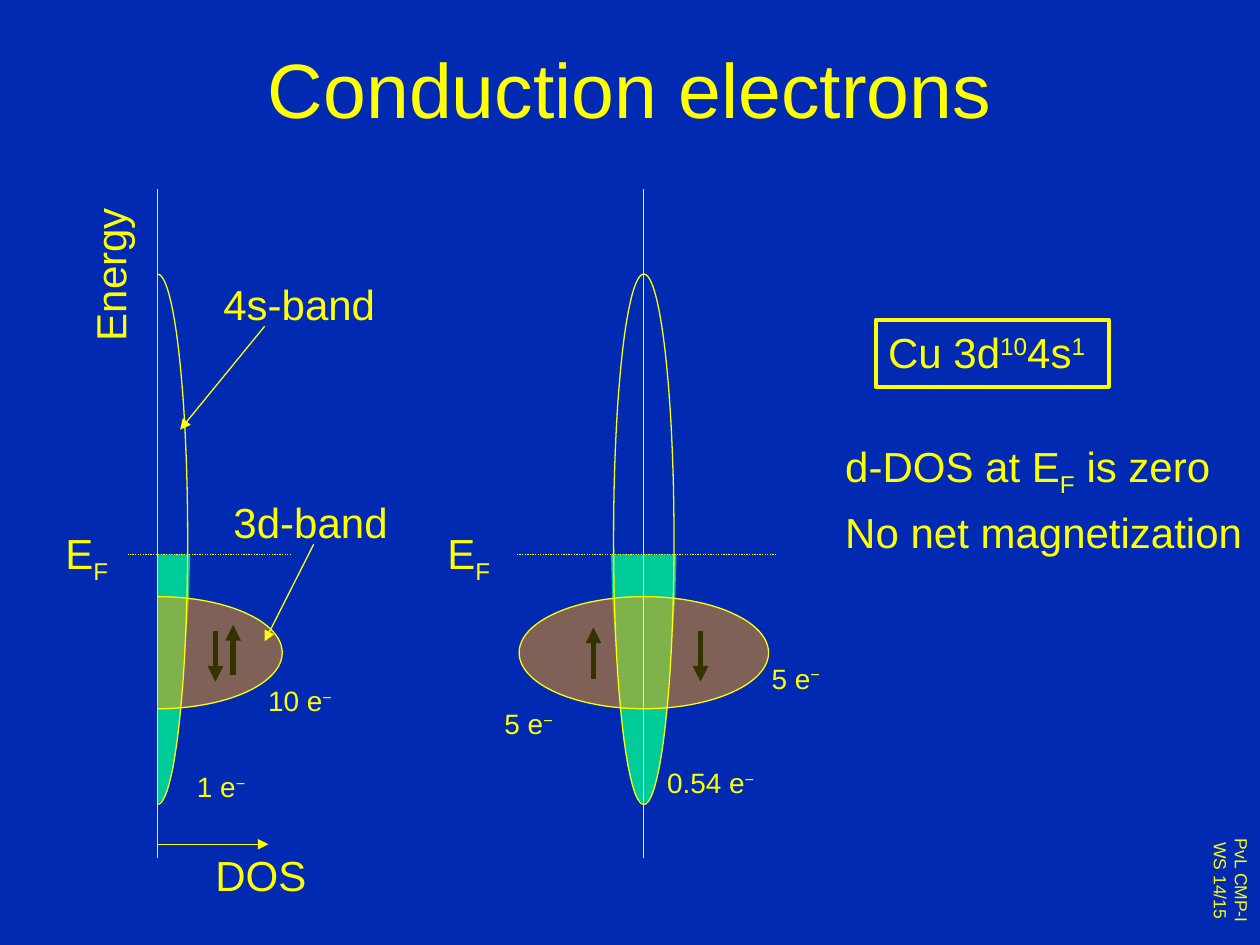
from math import cos, pi, sin

from pptx import Presentation
from pptx.dml.color import RGBColor
from pptx.enum.dml import MSO_LINE as Dash
from pptx.enum.shapes import MSO_CONNECTOR as Conn, MSO_SHAPE as Shape
from pptx.enum.text import MSO_ANCHOR as Anchor, MSO_AUTO_SIZE as Auto, PP_ALIGN as Align
from pptx.oxml.ns import qn
from pptx.util import Inches, Pt
from lxml.etree import SubElement

NAVY = RGBColor(0x00, 0x2A, 0xB2)
YELLOW = RGBColor(0xFF, 0xFF, 0x00)
GREEN = RGBColor(0x00, 0xCC, 0x99)
ORANGE = RGBColor(0xFF, 0x99, 0x00)
OLIVE = RGBColor(0x33, 0x33, 0x00)

SUB, SUP = -25, 30
FERMI = [("E", 0), ("F", SUB)]

# Distances from the axis and from its top end
AXIS = 5.31
LEVEL = 2.9
S_BAND = (2.78, 0.24, 2.105)  # middle, half width, half height
D_BAND = (3.68, 0.99, 0.445)
S_EDGE = [(0.26, 2.9), (0.25, 3.25), (0.23, 3.53), (0.2, 3.87), (0.19, 4.07),
          (0.16, 4.35), (0.13, 4.58), (0.07, 4.81), (0.05, 4.84)]
S_FOOT = 4.88


def write(frame, lines, size, align=Align.CENTER, gap=0):
    """Each line is a list of (text, baseline shift in percent)."""
    for i, line in enumerate(lines):
        para = frame.paragraphs[0] if i == 0 else frame.add_paragraph()
        para.alignment = align
        if i:
            para.space_before = Pt(gap)
        for text, shift in line:
            run = para.add_run()
            run.text = text
            run.font.size = Pt(size)
            run.font.name = "Arial"
            run.font.color.rgb = YELLOW
            if shift:
                run._r.get_or_add_rPr().set("baseline", str(shift * 1000))


def label(slide, box, *lines, size=24, align=Align.CENTER, gap=0):
    text = slide.shapes.add_textbox(*map(Inches, box))
    text.text_frame.word_wrap = False
    text.text_frame.auto_size = Auto.SHAPE_TO_FIT_TEXT
    write(text.text_frame, lines, size, align, gap)
    return text


def count(slide, box, number):
    label(slide, box, [(f"{number} e", 0), ("−", SUP)], size=16)


def rule(slide, start, end, color=YELLOW, width=0.75, arrow=False, dash=None):
    line = slide.shapes.add_connector(Conn.STRAIGHT, *map(Inches, (*start, *end)))
    line.line.color.rgb = color
    line.line.width = Pt(width)
    if dash:
        line.line.dash_style = dash
    if arrow:
        SubElement(line.line._get_or_add_ln(), qn("a:tailEnd"), type="triangle")
    SubElement(line._element.spPr, qn("a:effectLst"))


def spin(slide, x, tail, head):
    rule(slide, (x, tail), (x, head), OLIVE, 3, arrow=True)


def outline(slide, points, fill=None, alpha=None, line=False, close=False):
    spots = [(Inches(x), Inches(y)) for x, y in points]
    pen = slide.shapes.build_freeform(*spots[0], scale=1.0)
    pen.add_line_segments(spots[1:], close=close)
    form = pen.convert_to_shape()
    form.shadow.inherit = False
    if fill is None:
        form.fill.background()
    else:
        form.fill.solid()
        form.fill.fore_color.rgb = fill
        if alpha:
            color = form._element.spPr.find(".//" + qn("a:srgbClr"))
            SubElement(color, qn("a:alpha"), val=str(alpha * 1000))
    if line:
        form.line.color.rgb = YELLOW
        form.line.width = Pt(0.75)
    else:
        form.line.fill.background()


def arc(x, top, side, band, steps=48):
    """Points of half an ellipse on one side of the axis."""
    mid, wide, high = band
    turns = [pi * i / steps for i in range(steps + 1)]
    return [(x + side * wide * sin(t), top + mid - high * cos(t)) for t in turns]


def bands(slide, x, top, side):
    """Filled 4s states, 3d band and 4s outline on one side of the axis."""
    edge = [(x + side * dx, top + dy) for dx, dy in S_EDGE]
    outline(slide, [(x, top + S_FOOT), (x, top + LEVEL), *edge], GREEN, close=True)
    outline(slide, arc(x, top, side, D_BAND), ORANGE, 50, line=True)
    outline(slide, arc(x, top, side, S_BAND), line=True)


def diagram(slide, x, top, sides, level):
    for side in sides:
        bands(slide, x, top, side)
    rule(slide, (x, top), (x, top + AXIS))
    left, right = level
    y = top + LEVEL
    rule(slide, (x + right, y), (x + left, y), dash=Dash.ROUND_DOT)


def total(slide, x, top):
    """Density of states with both spins together."""
    diagram(slide, x, top, [1], (-0.23, 1.06))
    spin(slide, x + 0.6, top + 3.86, top + 3.46)
    spin(slide, x + 0.46, top + 3.51, top + 3.91)
    rule(slide, (x, top + 5.2), (x + 0.88, top + 5.2), arrow=True)
    label(slide, (x + 0.36, top + 5.19, 0.92, 0.5), [("DOS", 0)])
    label(slide, (x - 1.01, top + 0.43, 1.26, 0.5), [("Energy", 0)]).rotation = 270
    label(slide, (x + 0.42, top + 0.66, 1.41, 0.5), [("4s-band", 0)])
    rule(slide, (x + 0.85, top + 1.09), (x + 0.18, top + 1.91), arrow=True)
    label(slide, (x + 0.5, top + 2.39, 1.43, 0.5), [("3d-band", 0)])
    rule(slide, (x + 1.24, top + 2.82), (x + 0.85, top + 3.59), arrow=True)
    label(slide, (x - 0.84, top + 2.64, 0.56, 0.5), FERMI)
    count(slide, (x + 0.77, top + 3.88, 0.72, 0.37), "10")
    count(slide, (x + 0.21, top + 4.56, 0.59, 0.37), "1")


def split(slide, x, top):
    """Density of states with one spin on each side."""
    diagram(slide, x, top, [1, -1], (-1.01, 1.05))
    spin(slide, x - 0.4, top + 3.89, top + 3.48)
    spin(slide, x + 0.45, top + 3.51, top + 3.91)
    label(slide, (x - 1.67, top + 2.64, 0.56, 0.5), FERMI)
    count(slide, (x - 1.21, top + 4.06, 0.59, 0.37), "5")
    count(slide, (x + 0.91, top + 3.7, 0.59, 0.37), "5")
    count(slide, (x + 0.08, top + 4.53, 0.9, 0.37), "0.54")


def notes(slide, x, top):
    frame = slide.shapes.add_shape(
        Shape.RECTANGLE, *map(Inches, (x + 0.34, top, 1.85, 0.53)))
    frame.shadow.inherit = False
    frame.fill.background()
    frame.line.color.rgb = YELLOW
    frame.line.width = Pt(2.25)
    frame.text_frame.word_wrap = False
    frame.text_frame.vertical_anchor = Anchor.TOP
    write(frame.text_frame, [[("Cu 3d", 0), ("10", SUP), ("4s", 0), ("1", SUP)]],
          24, Align.LEFT)
    label(slide, (x, top + 0.91, 3.39, 1.31),
          [("d-DOS at E", 0), ("F", SUB), (" is zero", 0)],
          [("No net magnetization", 0)], align=Align.LEFT, gap=5)


def heading(slide, box):
    title = slide.shapes.title
    title.left, title.top, title.width, title.height = map(Inches, box)
    title.text_frame.vertical_anchor = Anchor.MIDDLE
    write(title.text_frame, [[("Conduction electrons", 0)]], 44)


def credit(slide, box):
    text = label(slide, box, [("PvL CMP-I", 0)], [("WS 14/15", 0)], size=10)
    text.text_frame._txBody.bodyPr.set("vert", "vert")


def main():
    deck = Presentation()
    deck.slide_width, deck.slide_height = Inches(10), Inches(7.5)
    slide = deck.slides.add_slide(deck.slide_layouts[5])
    slide.background.fill.solid()
    slide.background.fill.fore_color.rgb = NAVY
    heading(slide, (0.75, 0.07, 8.5, 1.25))
    total(slide, 1.25, 1.5)
    split(slide, 5.11, 1.5)
    notes(slide, 6.61, 2.54)
    credit(slide, (9.45, 6.6, 0.54, 0.78))
    deck.save("out.pptx")


if __name__ == "__main__":
    main()
